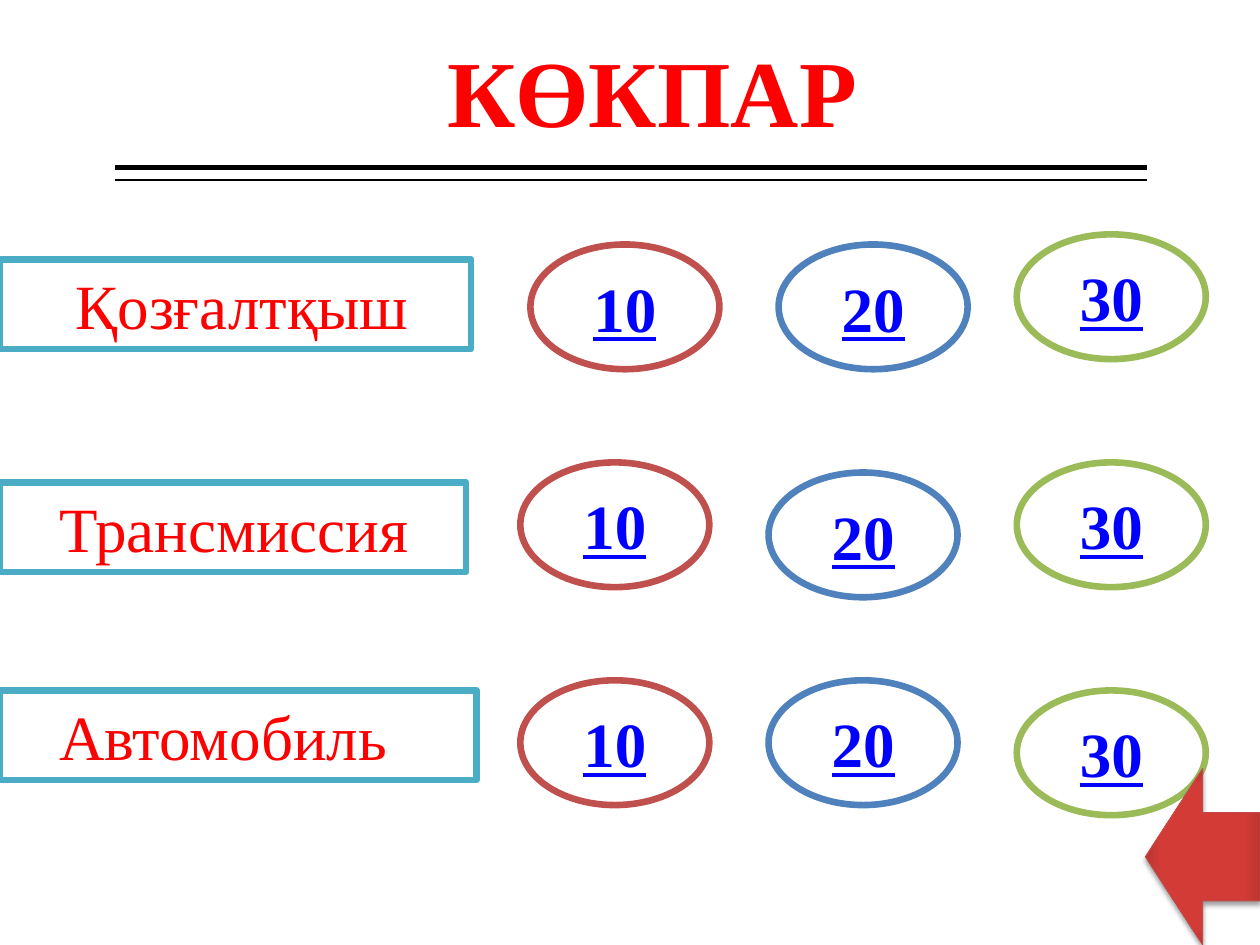
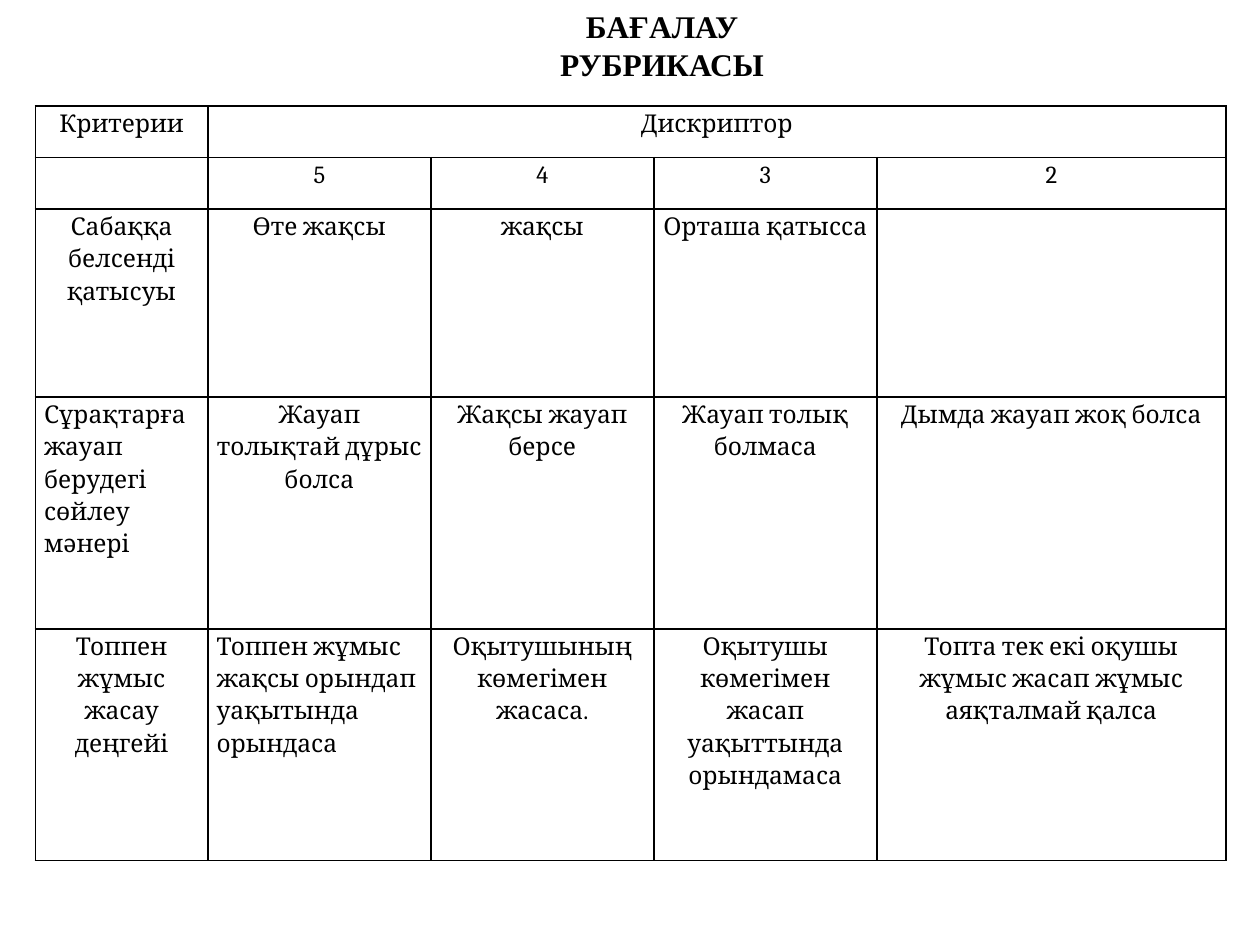
from typing import Any, NamedTuple

from lxml import etree
from pptx import Presentation
from pptx import util as u
from pptx.dml.color import RGBColor
from pptx.enum import shapes, text
from pptx.oxml import parse_xml
from pptx.oxml.ns import nsdecls, qn

SLIDE_W, SLIDE_H = u.Inches(10), u.Inches(7.5)
TITLE_ONLY = 5
SERIF, TABLE_FONT = "Times New Roman", "Cambria"
COLORS = {
    "black": "000000", "white": "FFFFFF", "red": "FF0000", "link": "0000FF",
    "topic": "4BACC6", "ten": "C0504D", "twenty": "4F81BD", "thirty": "9BBB59",
    "arrow_core": "D53C38", "arrow_mid": "D33B37", "arrow_rim": "BC3531",
    "arrow_line": "BF4C48",
}


class Area(NamedTuple):
    """Left, top, width and height in percent of the slide."""
    left: float
    top: float
    width: float
    height: float


class Topic(NamedTuple):
    name: str
    top: float
    width: float
    indent: float  # inches


class Score(NamedTuple):
    points: int
    color: str
    nudges: tuple  # (right, down) steps off the grid, one per topic


TOPICS = [
    Topic("Қозғалтқыш", 27.47, 37.4, 0.6),
    Topic("Трансмиссия", 51.07, 37.0, 0.47),
    Topic("Автомобиль", 73.07, 37.8, 0.47),
]
SCORES = [
    Score(10, "ten", ((1, 1), (0, 0), (0, -1))),
    Score(20, "twenty", ((1, 1), (0, 1), (0, -1))),
    Score(30, "thirty", ((0, 0), (0, 0), (0, 0))),
]
# Score grid: first oval, distance between ovals, and one nudge step
FIRST_OVAL = Area(41.3, 24.8, 15, 13.2)
PITCH_X, PITCH_Y = 19.7, 24.13
NUDGE_X, NUDGE_Y = 0.8, 1.07

RUBRIC_COLUMNS = [13.7, 17.7, 17.7, 17.7, 27.7]
RUBRIC_ROWS = [5.47, 5.47, 19.87, 24.53, 24.53]
RUBRIC = [
    ["Критерии", "Дискриптор", "", "", ""],
    ["", "5", "4", "3", "2"],
    ["Сабаққа белсенді қатысуы", "Өте жақсы", "жақсы", "Орташа қатысса", ""],
    ["Сұрақтарға жауап берудегі сөйлеу мәнері", "Жауап толықтай дұрыс болса",
     "Жақсы жауап берсе", "Жауап толық болмаса", "Дымда жауап жоқ болса"],
    ["Топпен жұмыс жасау деңгейі", "Топпен жұмыс жақсы орындап уақытында орындаса",
     "Оқытушының көмегімен жасаса.", "Оқытушы көмегімен жасап уақыттында орындамаса",
     "Топта тек екі оқушы жұмыс жасап жұмыс аяқталмай қалса"],
]
LEFT_ALIGNED = {(3, 0), (4, 1)}


def across(percent: float) -> int:
    return round(SLIDE_W * percent / 100)


def down(percent: float) -> int:
    return round(SLIDE_H * percent / 100)


def emu(area: Area) -> tuple[int, int, int, int]:
    return across(area.left), down(area.top), across(area.width), down(area.height)


def rgb(name: str) -> RGBColor:
    return RGBColor.from_string(COLORS[name])


def write(frame: Any, words: str, *, size: float, font: str = SERIF,
          color: str = "black", bold: bool = False, underline: bool = False,
          align: Any = text.PP_ALIGN.CENTER, anchor: Any = text.MSO_ANCHOR.MIDDLE,
          spacing: float = 1.0) -> None:
    frame.word_wrap = True
    frame.vertical_anchor = anchor
    paragraph = frame.paragraphs[0]
    paragraph.alignment, paragraph.line_spacing = align, spacing
    run = paragraph.add_run()
    run.text = words
    run.font.name, run.font.size = font, u.Pt(size)
    run.font.bold, run.font.underline = bold, underline
    run.font.color.rgb = rgb(color)


def add_title(slide: Any, words: str, area: Area, **style: Any) -> None:
    title = slide.shapes.title
    title.left, title.top, title.width, title.height = emu(area)
    title.text_frame.auto_size = text.MSO_AUTO_SIZE.NONE
    write(title.text_frame, words, bold=True, **style)


def add_rule(slide: Any, top: float, weight: float) -> None:
    rule = slide.shapes.add_connector(
        shapes.MSO_CONNECTOR.STRAIGHT, across(91), down(top), across(9.1), down(top))
    rule.line.color.rgb, rule.line.width = rgb("black"), u.Pt(weight)
    etree.SubElement(rule.element.spPr, qn("a:effectLst"))


def add_outlined(slide: Any, kind: Any, area: Area, outline: str) -> Any:
    shape = slide.shapes.add_shape(kind, *emu(area))
    shape.shadow.inherit = False
    shape.fill.solid()
    shape.fill.fore_color.rgb = rgb("white")
    shape.line.color.rgb, shape.line.width = rgb(outline), u.Pt(3.78)
    return shape


def add_back_arrow(slide: Any, area: Area) -> None:
    arrow = slide.shapes.add_shape(shapes.MSO_SHAPE.LEFT_ARROW, *emu(area))
    arrow.shadow.inherit = False
    arrow.line.color.rgb, arrow.line.width = rgb("arrow_line"), u.Pt(0.5)
    stops = "".join(
        f'<a:gs pos="{place * 1000}"><a:srgbClr val="{COLORS[name]}"/></a:gs>'
        for place, name in ((0, "arrow_core"), (71, "arrow_mid"), (100, "arrow_rim")))
    properties = arrow.element.spPr
    properties.find(qn("a:prstGeom")).addnext(parse_xml(
        f'<a:gradFill {nsdecls("a")} rotWithShape="1"><a:gsLst>{stops}</a:gsLst>'
        '<a:path path="rect"><a:fillToRect l="50000" t="50000" r="50000" b="50000"/>'
        '</a:path></a:gradFill>'))
    properties.find(qn("a:effectLst")).append(parse_xml(
        f'<a:outerShdw {nsdecls("a")} blurRad="{u.Pt(3.1)}" dist="{u.Pt(2)}" '
        f'dir="5400000" rotWithShape="0"><a:srgbClr val="{COLORS["black"]}">'
        '<a:alpha val="38000"/></a:srgbClr></a:outerShdw>'))


def frame_cell(cell: Any) -> None:
    properties = cell._tc.get_or_add_tcPr()
    for side in ("lnL", "lnR", "lnT", "lnB"):
        properties.append(parse_xml(
            f'<a:{side} {nsdecls("a")} w="{u.Pt(1)}"><a:solidFill>'
            f'<a:srgbClr val="{COLORS["black"]}"/></a:solidFill></a:{side}>'))
    cell.fill.background()
    cell.margin_left = cell.margin_right = u.Inches(0.07)
    cell.margin_top = cell.margin_bottom = 0


def build_game(slide: Any) -> None:
    add_rule(slide, 17.73, 3)
    add_rule(slide, 19.07, 1)
    add_title(slide, "КӨКПАР", Area(34.3, 2.8, 34.9, 13.47), size=54, color="red",
              anchor=text.MSO_ANCHOR.TOP)
    # Topic labels
    for topic in TOPICS:
        label = add_outlined(slide, shapes.MSO_SHAPE.RECTANGLE,
                             Area(0, topic.top, topic.width, 9.47), "topic")
        label.text_frame.margin_left = u.Inches(topic.indent)
        write(label.text_frame, topic.name, size=36, color="red",
              align=text.PP_ALIGN.LEFT)
    # Score ovals
    for column, score in enumerate(SCORES):
        for row, (right, lower) in enumerate(score.nudges):
            area = FIRST_OVAL._replace(
                left=FIRST_OVAL.left + column * PITCH_X + right * NUDGE_X,
                top=FIRST_OVAL.top + row * PITCH_Y + lower * NUDGE_Y)
            oval = add_outlined(slide, shapes.MSO_SHAPE.OVAL, area, score.color)
            write(oval.text_frame, str(score.points), size=36, color="link",
                  bold=True, underline=True)
    add_back_arrow(slide, Area(90.9, 81.33, 9.1, 18.67))


def build_rubric(slide: Any) -> None:
    add_title(slide, "БАҒАЛАУ РУБРИКАСЫ", Area(37.4, 0, 30.3, 9.47), size=18)
    area = Area(2.8, 11.2, sum(RUBRIC_COLUMNS), sum(RUBRIC_ROWS))
    table = slide.shapes.add_table(len(RUBRIC_ROWS), len(RUBRIC_COLUMNS), *emu(area)).table
    table.first_row = table.horz_banding = False
    for column, width in zip(table.columns, RUBRIC_COLUMNS):
        column.width = across(width)
    for row, height in zip(table.rows, RUBRIC_ROWS):
        row.height = down(height)
    table.cell(0, 1).merge(table.cell(0, 4))
    for r, line in enumerate(RUBRIC):
        for c, words in enumerate(line):
            cell = table.cell(r, c)
            frame_cell(cell)
            if words:
                align = (text.PP_ALIGN.LEFT if (r, c) in LEFT_ALIGNED
                         else text.PP_ALIGN.CENTER)
                write(cell.text_frame, words, size=14, font=TABLE_FONT, align=align,
                      anchor=text.MSO_ANCHOR.TOP, spacing=1.15)


def main() -> None:
    deck = Presentation()
    deck.slide_width, deck.slide_height = SLIDE_W, SLIDE_H
    for build in (build_game, build_rubric):
        build(deck.slides.add_slide(deck.slide_layouts[TITLE_ONLY]))
    deck.save("out.pptx")


if __name__ == "__main__":
    main()
